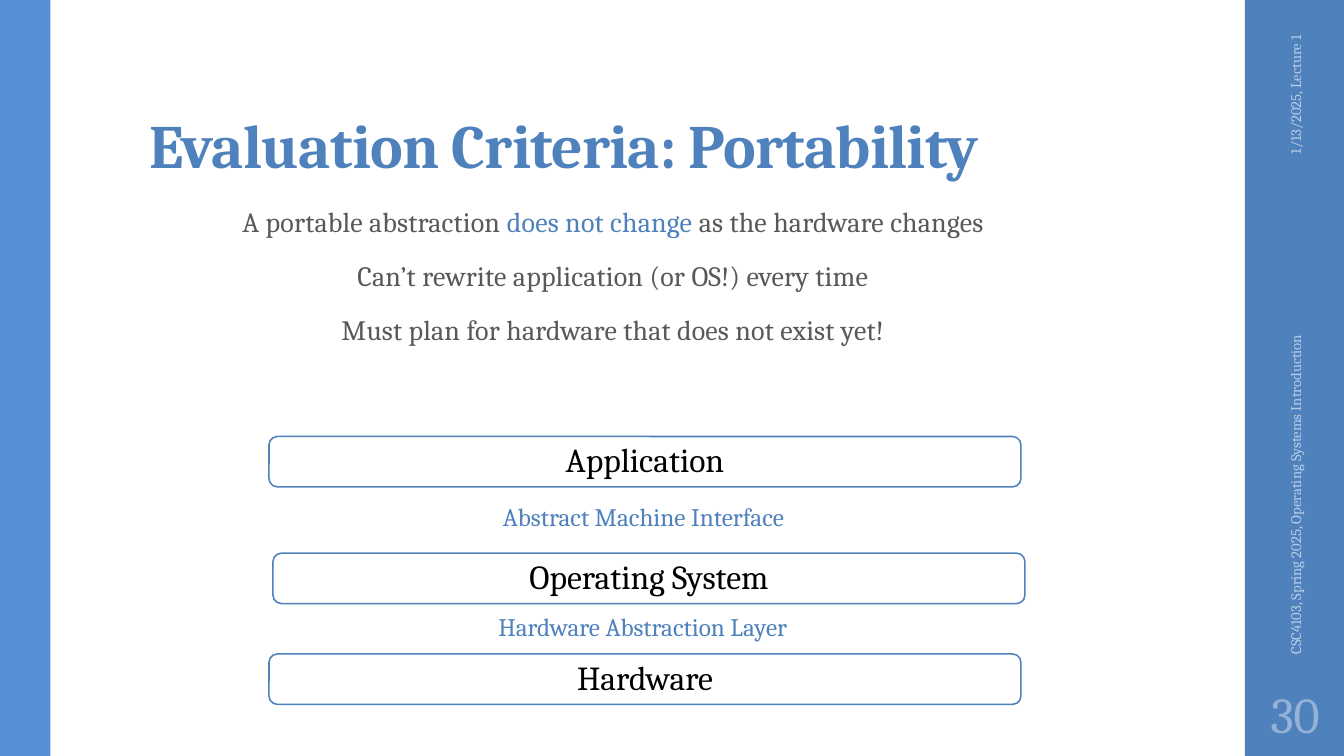
from pptx import Presentation
from pptx.dml.color import RGBColor
from pptx.enum.shapes import MSO_SHAPE
from pptx.enum.text import MSO_ANCHOR, PP_ALIGN
from pptx.util import Cm, Pt

LEFT, CENTER, RIGHT = PP_ALIGN.LEFT, PP_ALIGN.CENTER, PP_ALIGN.RIGHT
TOP, MIDDLE, BOTTOM = MSO_ANCHOR.TOP, MSO_ANCHOR.MIDDLE, MSO_ANCHOR.BOTTOM
RECT, ROUNDED = MSO_SHAPE.RECTANGLE, MSO_SHAPE.ROUNDED_RECTANGLE

BLUE = RGBColor(0x4F, 0x81, 0xBD)
BRIGHT_BLUE = RGBColor(0x55, 0x8E, 0xD5)
PALE_BLUE = RGBColor(0xB9, 0xCD, 0xE5)
SOFT_BLUE = RGBColor(0x95, 0xB3, 0xD7)
GRAY = RGBColor(0x59, 0x59, 0x59)
BLACK = RGBColor(0, 0, 0)
WHITE = RGBColor(0xFF, 0xFF, 0xFF)
FONT = "Cambria"

# Content: each paragraph is a list of (text, colour) runs; lengths in cm
SLIDE_WIDTH, SLIDE_HEIGHT = 33.87, 19.05
TITLE = [[("Evaluation Criteria: Portability", BLUE)]]
POINTS = [
    [("A portable abstraction ", GRAY), ("does not change ", BLUE),
     ("as the hardware changes", GRAY)],
    [("Can’t rewrite application (or OS!) every time", GRAY)],
    [("Must plan for hardware that does not exist yet!", GRAY)],
]
STRIPES = [(31.37, 2.5, BLUE), (0, 1.27, BRIGHT_BLUE)]
SIDE_NOTES = [
    ("1/13/2025, Lecture 1", (30, 2.77, 5.28, 1.02), RIGHT),
    ("CSC4103, Spring 2025, Operating Systems Introduction",
     (27.66, 11.25, 9.96, 1.02), LEFT),
]
PAGE_NUMBER = "30"
LAYERS = [("Application", 6.78, 11), ("Operating System", 6.88, 13.94),
          ("Hardware", 6.78, 16.48)]
INTERFACES = [("Abstract Machine Interface", 4.47, 12.52),
              ("Hardware Abstraction Layer", 4.45, 15.27)]


def write(box, paragraphs, size, align=CENTER, anchor=TOP, line=1.0,
          before=0, after=0, tracking=0):
    frame = box.text_frame
    frame.word_wrap = True
    frame.vertical_anchor = anchor
    for index, runs in enumerate(paragraphs):
        para = frame.add_paragraph() if index else frame.paragraphs[0]
        para.alignment = align
        para.line_spacing = line
        para.space_before, para.space_after = Pt(before), Pt(after)
        for text, color in runs:
            span = para.add_run()
            span.text = text
            span.font.name, span.font.size = FONT, Pt(size)
            span.font.color.rgb = color
            if tracking:
                span._r.get_or_add_rPr().set("spc", str(tracking))
    return frame


def add_text(page, place, paragraphs, size, **style):
    box = page.shapes.add_textbox(*map(Cm, place))
    write(box, paragraphs, size, **style)
    return box


def add_block(page, kind, place, fill):
    block = page.shapes.add_shape(kind, *map(Cm, place))
    block.shadow.inherit = False
    block.fill.solid()
    block.fill.fore_color.rgb = fill
    block.line.fill.background()
    return block


def main():
    deck = Presentation()
    deck.slide_width, deck.slide_height = Cm(SLIDE_WIDTH), Cm(SLIDE_HEIGHT)
    page = deck.slides.add_slide(deck.slide_layouts[5])

    # Side stripes
    for left, width, color in STRIPES:
        add_block(page, RECT, (left, 0, width, SLIDE_HEIGHT), color)

    # Title
    title = page.shapes.title
    title.left, title.top = Cm(3.51), Cm(0.81)
    title.width, title.height = Cm(26.92), Cm(3.89)
    frame = write(title, TITLE, 44, align=LEFT, anchor=BOTTOM, line=0.9,
                  tracking=-50)
    frame.margin_left = frame.margin_right = Cm(0.25)
    frame.margin_top, frame.margin_bottom = Cm(0.08), Cm(0.13)
    frame.paragraphs[0].runs[0].font.bold = True

    # Main points
    add_text(page, (3.51, 5.08, 23.88, 5), POINTS, 20, line=0.95,
             before=14, after=2, tracking=10)

    # Vertical notes and page number on the right stripe
    for text, place, align in SIDE_NOTES:
        note = add_text(page, place, [[(text, PALE_BLUE)]], 10.5,
                        align=align, anchor=MIDDLE)
        note.rotation = 270
    number = add_text(page, (31.42, 17.15, 2.44, 1.65),
                      [[(PAGE_NUMBER, SOFT_BLUE)]], 36, anchor=MIDDLE)
    number.text_frame.margin_left = number.text_frame.margin_right = Cm(0.13)

    # System layers and the interfaces between them
    for text, left, top in LAYERS:
        layer = add_block(page, ROUNDED, (left, top, 18.95, 1.27), WHITE)
        layer.line.color.rgb = BLUE
        layer.line.width = Pt(1.1)
        write(layer, [[(text, BLACK)]], 24, anchor=MIDDLE, line=0.9)
    for text, left, top in INTERFACES:
        add_text(page, (left, top, 23.5, 1.02), [[(text, BLUE)]], 18)

    deck.save("out.pptx")


if __name__ == "__main__":
    main()
